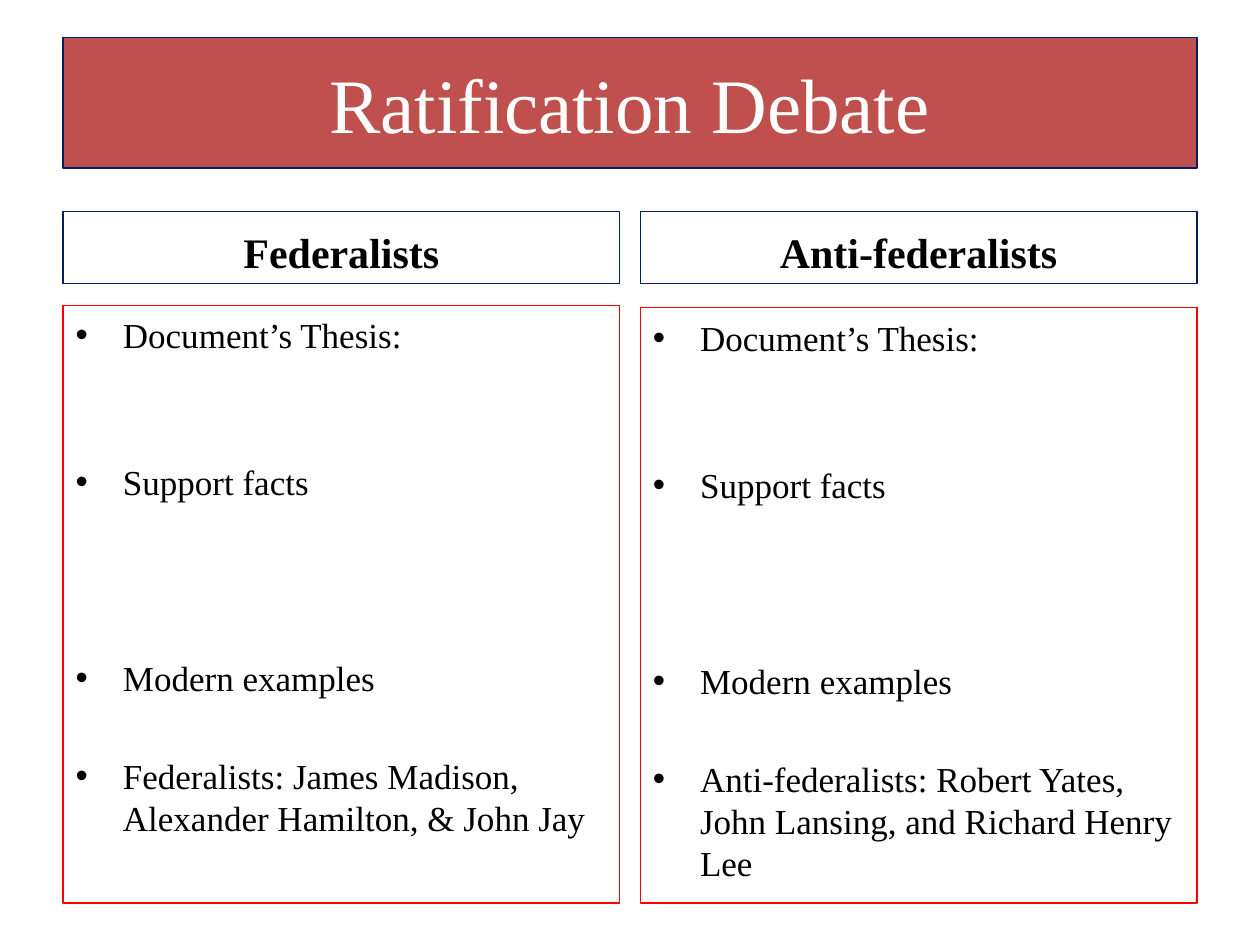
from pptx import Presentation
from pptx.dml.color import RGBColor
from pptx.enum import text
from pptx.util import Pt

WHITE = RGBColor(255, 255, 255)
BLACK = RGBColor(0, 0, 0)
BRICK = RGBColor(0xC0, 0x50, 0x4D)
NAVY = RGBColor(0, 0x20, 0x60)
RED = RGBColor(255, 0, 0)
FONT = "Times New Roman"

TITLE = "Ratification Debate"
# heading, top of the list box, height of the list box, supporters
COLUMNS = [
    ("Federalists", 174.4, 341.6,
     "Federalists: James Madison, Alexander Hamilton, & John Jay"),
    ("Anti-federalists", 175.6, 340.4,
     "Anti-federalists: Robert Yates, John Lansing, and Richard Henry Lee"),
]
PROMPTS = ["Document’s Thesis:", "Support facts", "Modern examples"]
WRITING_LINES = [2, 3, 1]  # room left after each prompt

MARGIN, COLUMN_WIDTH, COLUMN_STEP = 36, 318.2, 329.8
LINE_HEIGHT, LINE_GAP = 24, 4


def place(shape, left, top, width, height, line, anchor, fill=None):
    shape.left, shape.top, shape.width, shape.height = map(Pt, (left, top, width, height))
    shape.line.color.rgb = line
    shape.line.width = Pt(0.75)
    if fill is not None:
        shape.fill.solid()
        shape.fill.fore_color.rgb = fill
    shape.text_frame.auto_size = text.MSO_AUTO_SIZE.NONE
    shape.text_frame.vertical_anchor = anchor


def write(shape, lines, size, color, bold=False, align=None):
    shape.text_frame.text = "\n".join(lines)
    for paragraph in shape.text_frame.paragraphs:
        paragraph.alignment = align
        paragraph.space_before = Pt(0)
        for run in paragraph.runs:
            run.font.name = FONT
            run.font.size = Pt(size)
            run.font.bold = bold
            run.font.color.rgb = color


presentation = Presentation()
presentation.slide_width, presentation.slide_height = Pt(720), Pt(540)
slide = presentation.slides.add_slide(presentation.slide_layouts.get_by_name("Comparison"))
title, *bodies = slide.placeholders
CENTER = text.PP_ALIGN.CENTER

place(title, MARGIN, 21.6, 648, 74.4, NAVY, text.MSO_ANCHOR.MIDDLE, BRICK)
write(title, [TITLE], 44, WHITE, align=CENTER)

for index, (name, top, height, supporters) in enumerate(COLUMNS):
    heading, points = bodies[2 * index:2 * index + 2]
    left = MARGIN + index * COLUMN_STEP
    place(heading, left, 121, COLUMN_WIDTH, 41, NAVY, text.MSO_ANCHOR.BOTTOM, WHITE)
    write(heading, [name], 24, BLACK, bold=True, align=CENTER)

    place(points, left, top, COLUMN_WIDTH, height, RED, text.MSO_ANCHOR.TOP)
    points.text_frame.margin_top = Pt(5)
    write(points, PROMPTS + [supporters], 20, BLACK)
    paragraphs = points.text_frame.paragraphs
    for paragraph in paragraphs:
        paragraph.line_spacing = Pt(LINE_HEIGHT)
    for paragraph, blank in zip(paragraphs[1:], WRITING_LINES):
        paragraph.space_before = Pt(blank * (LINE_HEIGHT + LINE_GAP) + LINE_GAP)

presentation.save("out.pptx")
